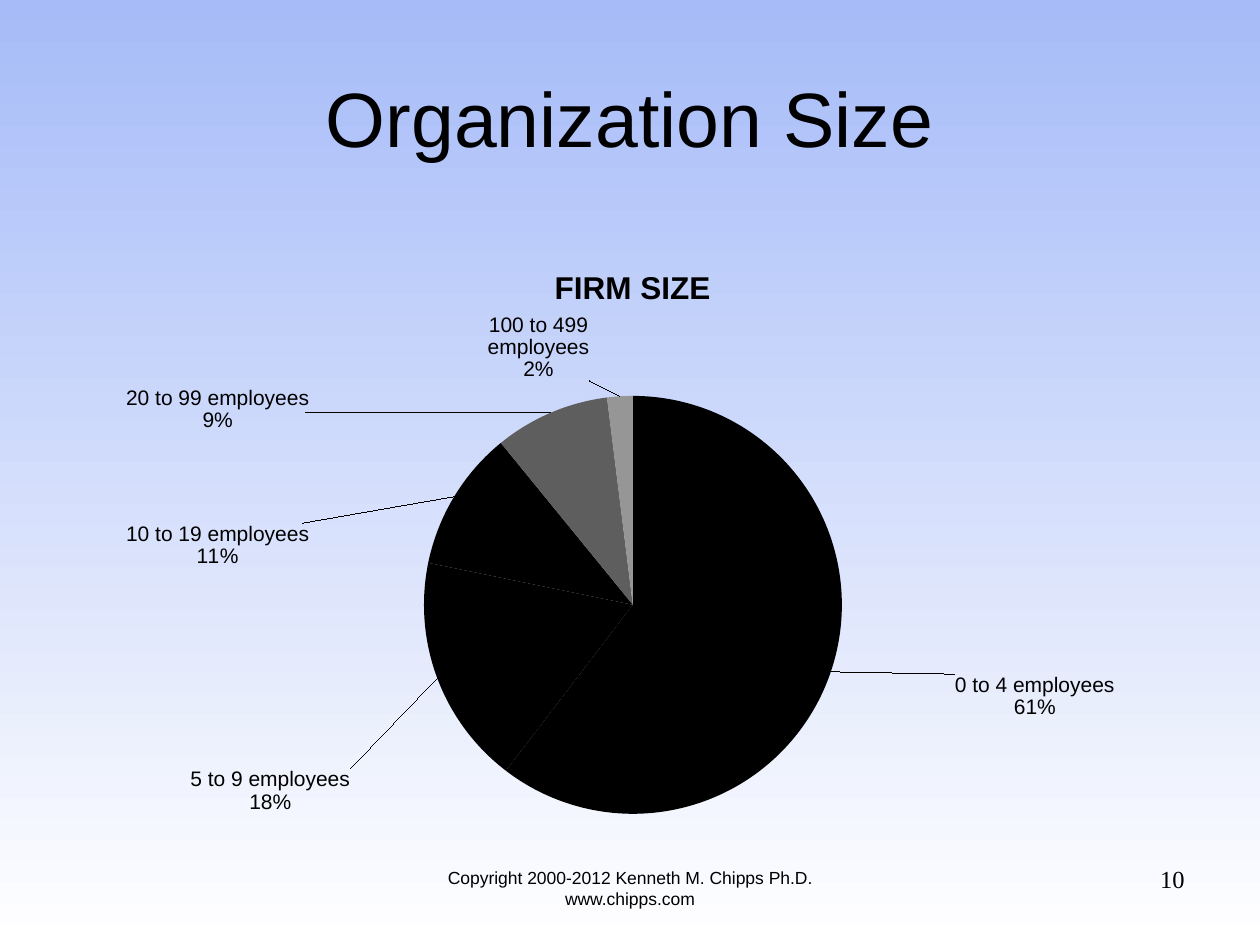
from dataclasses import dataclass

from pptx import Presentation
from pptx.chart.data import CategoryChartData
from pptx.dml.color import RGBColor
from pptx.enum.chart import XL_CHART_TYPE
from pptx.enum.text import MSO_ANCHOR, PP_ALIGN
from pptx.oxml import parse_xml
from pptx.oxml.ns import nsdecls
from pptx.util import Emu, Pt

PIE = XL_CHART_TYPE.PIE
CENTER, RIGHT = PP_ALIGN.CENTER, PP_ALIGN.RIGHT
TOP, MIDDLE = MSO_ANCHOR.TOP, MSO_ANCHOR.MIDDLE
EMU_PER_PX = 914400 / 126
BLACK = "000000"
SANS, SERIF = "Arial", "Times New Roman"


@dataclass(frozen=True)
class Box:
    left: int
    top: int
    width: int
    height: int

    def emu(self) -> list[Emu]:
        return [px(n) for n in (self.left, self.top, self.width, self.height)]


@dataclass(frozen=True)
class Caption:
    text: str
    box: Box
    size: int
    font: str = SANS
    align: PP_ALIGN = CENTER
    anchor: MSO_ANCHOR = TOP


@dataclass(frozen=True)
class Slice:
    category: str
    percent: int
    color: str
    label_dx: int
    label_dy: int


CAPTIONS = [
    Caption("Organization Size", Box(63, 38, 1134, 158), 44, anchor=MIDDLE),
    Caption("Copyright 2000-2012 Kenneth M. Chipps Ph.D. www.chipps.com",
            Box(378, 861, 504, 66), 10),
    Caption("10", Box(903, 858, 294, 66), 14, SERIF, RIGHT),
]
CHART = Box(126, 231, 1002, 601)
PIE_AREA = Box(424, 396, 418, 418)
CHART_TITLE = Box(549, 261, 155, 36)
SLICES = [
    Slice("0 to 4 employees", 61, BLACK, 117, 0),
    Slice("5 to 9 employees", 18, BLACK, -80, 88),
    Slice("10 to 19 employees", 11, BLACK, -145, 75),
    Slice("20 to 99 employees", 9, "5E5E5E", -242, 26),
    Slice("100 to 499 employees", 2, "969696", -81, -8),
    Slice("500 employees or more", 0, "C0C0C0", 58, -8),
]
LABEL_CONTENT = (
    '<c:dLblPos val="outEnd"/><c:showLegendKey val="0"/><c:showVal val="1"/>'
    '<c:showCatName val="1"/><c:showSerName val="0"/><c:showPercent val="0"/>'
    '<c:showBubbleSize val="0"/><c:separator>\n</c:separator>'
)
LABEL_FORMAT = '<c:numFmt formatCode="0&quot;%&quot;" sourceLinked="0"/>'


def px(length: int) -> Emu:
    return Emu(round(length * EMU_PER_PX))


def rgb(color: str) -> RGBColor:
    return RGBColor.from_string(color)


def set_font(font, size: int, name: str = SANS, bold: bool = False) -> None:
    font.size = Pt(size)
    font.name = name
    font.bold = bold
    font.color.rgb = rgb(BLACK)


def paint_background(slide) -> None:
    fill = slide.background.fill
    fill.gradient()
    fill.gradient_angle = 270
    for stop, color, position in zip(fill.gradient_stops, ("A6BBF8", "FFFFFF"), (0, 1)):
        stop.color.rgb = rgb(color)
        stop.position = position


def add_caption(slide, caption: Caption) -> None:
    frame = slide.shapes.add_textbox(*caption.box.emu()).text_frame
    frame.word_wrap = True
    frame.vertical_anchor = caption.anchor
    paragraph = frame.paragraphs[0]
    paragraph.text = caption.text
    paragraph.alignment = caption.align
    set_font(paragraph.font, caption.size, caption.font)


def layout_xml(box: Box, inner: bool = False) -> str:
    target = '<c:layoutTarget val="inner"/>' if inner else ""
    size = (f'<c:w val="{box.width / CHART.width:.4f}"/>'
            f'<c:h val="{box.height / CHART.height:.4f}"/>') if inner else ""
    return (f'<c:layout {nsdecls("c")}><c:manualLayout>{target}'
            '<c:xMode val="edge"/><c:yMode val="edge"/>'
            f'<c:x val="{(box.left - CHART.left) / CHART.width:.4f}"/>'
            f'<c:y val="{(box.top - CHART.top) / CHART.height:.4f}"/>'
            f'{size}</c:manualLayout></c:layout>')


def label_xml(index: int, part: Slice) -> str:
    return (f'<c:dLbl><c:idx val="{index}"/><c:layout><c:manualLayout>'
            f'<c:x val="{part.label_dx / CHART.width:.4f}"/>'
            f'<c:y val="{part.label_dy / CHART.height:.4f}"/>'
            f'</c:manualLayout></c:layout>{LABEL_FORMAT}{LABEL_CONTENT}</c:dLbl>')


def add_labels(plot) -> None:
    labels = "".join(label_xml(i, part) for i, part in enumerate(SLICES))
    series = plot.series[0]._element
    series.find("{*}cat").addprevious(parse_xml(
        f'<c:dLbls {nsdecls("c")}>{labels}{LABEL_FORMAT}{LABEL_CONTENT}'
        '<c:showLeaderLines val="1"/></c:dLbls>'))


def place_layout(parent, before: str, xml: str) -> None:
    for existing in parent.findall("{*}layout"):
        parent.remove(existing)
    parent.find("{*}" + before).addprevious(parse_xml(xml))


def add_firm_size_chart(slide) -> None:
    data = CategoryChartData()
    data.categories = [part.category for part in SLICES]
    data.add_series("Series 1", [part.percent for part in SLICES])
    chart = slide.shapes.add_chart(PIE, *CHART.emu(), data).chart
    set_font(chart.font, 12)
    chart.has_legend = False
    chart.has_title = True
    heading = chart.chart_title.text_frame.paragraphs[0]
    heading.text = "FIRM SIZE"
    set_font(heading.font, 18, bold=True)
    place_layout(chart.chart_title._element, "overlay", layout_xml(CHART_TITLE))

    plot = chart.plots[0]
    plot.vary_by_categories = True
    for index, part in enumerate(SLICES):
        style = plot.series[0].points[index].format
        style.fill.solid()
        style.fill.fore_color.rgb = rgb(part.color)
        style.line.fill.background()
    add_labels(plot)
    place_layout(plot._element.getparent(), "pieChart", layout_xml(PIE_AREA, inner=True))


def main() -> None:
    deck = Presentation()
    deck.slide_width, deck.slide_height = px(1260), px(945)
    slide = deck.slides.add_slide(deck.slide_layouts[6])
    paint_background(slide)
    for caption in CAPTIONS:
        add_caption(slide, caption)
    add_firm_size_chart(slide)
    deck.save("out.pptx")


if __name__ == "__main__":
    main()
